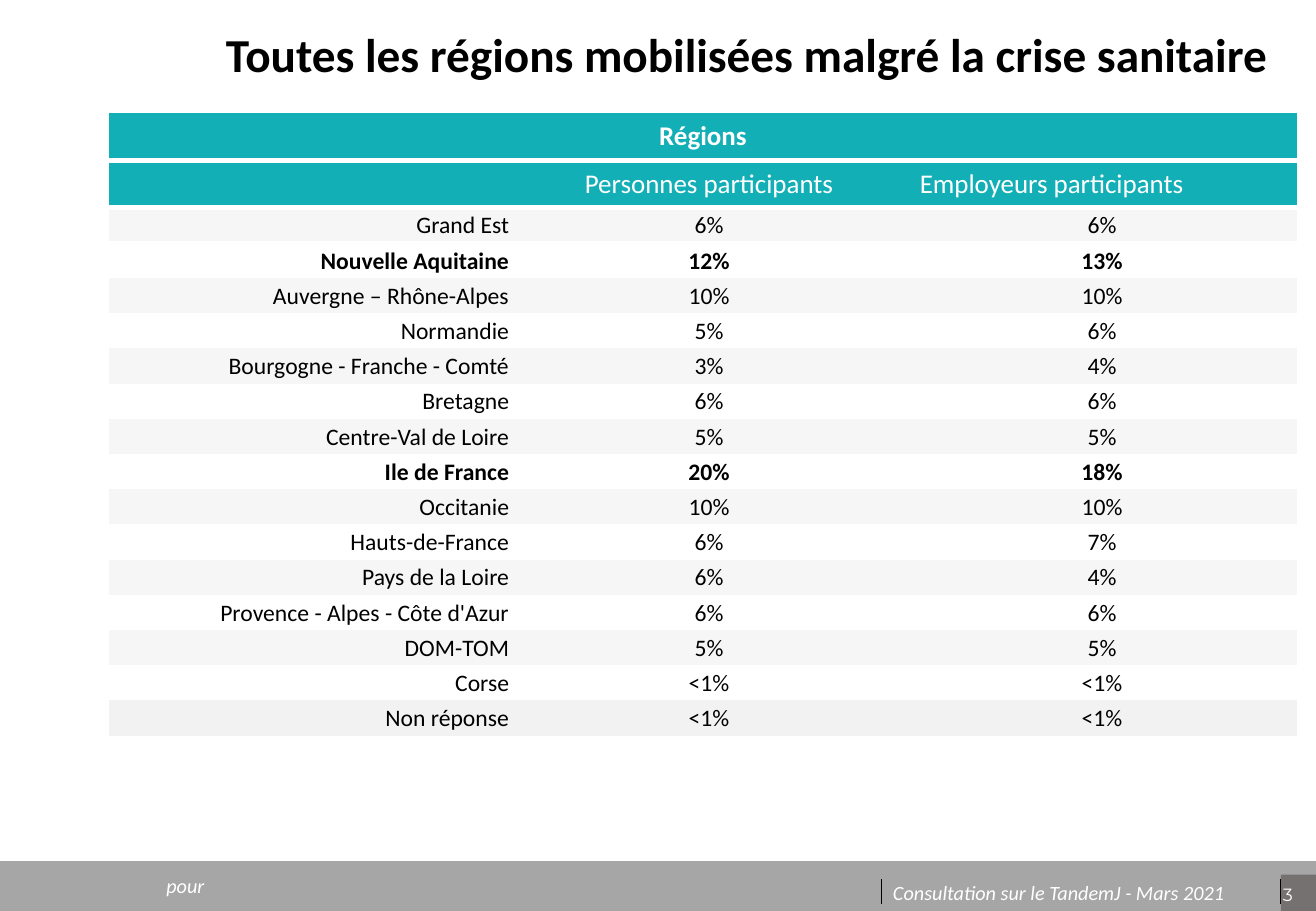
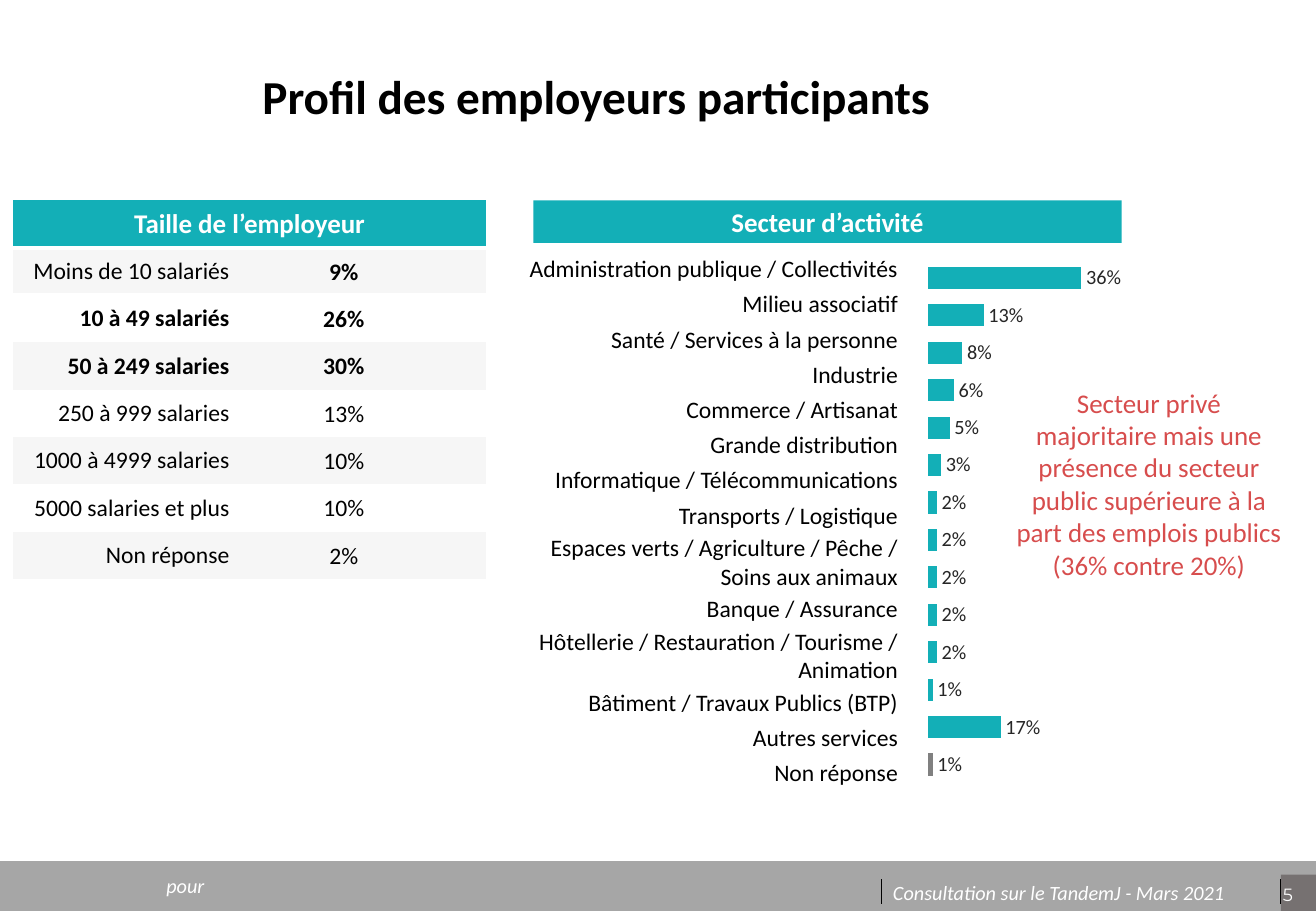
from lxml import etree
from pptx import Presentation
from pptx.chart.data import CategoryChartData
from pptx.dml.color import RGBColor
from pptx.enum.chart import XL_CHART_TYPE, XL_LABEL_POSITION
from pptx.enum.shapes import MSO_CONNECTOR, MSO_SHAPE
from pptx.enum.text import MSO_ANCHOR, MSO_AUTO_SIZE, PP_ALIGN
from pptx.oxml.ns import qn
from pptx.util import Inches, Pt

LEFT, CENTER, RIGHT = PP_ALIGN.LEFT, PP_ALIGN.CENTER, PP_ALIGN.RIGHT
MIDDLE = MSO_ANCHOR.MIDDLE
RECTANGLE = MSO_SHAPE.RECTANGLE
STRAIGHT = MSO_CONNECTOR.STRAIGHT
NO_AUTOFIT = MSO_AUTO_SIZE.NONE
BAR_CLUSTERED = XL_CHART_TYPE.BAR_CLUSTERED
OUTSIDE_END = XL_LABEL_POSITION.OUTSIDE_END

TEAL = RGBColor(0x13, 0xAF, 0xB7)
STRIPE = RGBColor(0xF6, 0xF6, 0xF6)
LAST_STRIPE = RGBColor(0xF2, 0xF2, 0xF2)
BAND_GREY = RGBColor(0xA6, 0xA6, 0xA6)
PAGE_GREY = RGBColor(0x76, 0x71, 0x71)
BAR_GREY = RGBColor(0x80, 0x80, 0x80)
LABEL_GREY = RGBColor(0x26, 0x26, 0x26)
RED = RGBColor(0xD7, 0x4D, 0x4D)
WHITE = RGBColor(0xFF, 0xFF, 0xFF)
BLACK = RGBColor(0, 0, 0)

BODY_FONT, PAGE_FONT = "Calibri", "Montserrat"
NO_GRID_STYLE = "{2D5ABB26-0587-4C30-8999-92F81FD0307C}"
SLIDE_WIDTH, SLIDE_HEIGHT = 10.83, 7.5
HEADER_ROW, DATA_ROW, TWO_LINE_ROW = 0.39, 0.29, 0.48
TIGHT = 0.01


def write(frame, text, size, color, align=LEFT, bold=False, italic=False, name=BODY_FONT):
    frame.text = text
    para = frame.paragraphs[0]
    para.alignment = align
    font = para.font
    font.name, font.size, font.bold, font.italic = name, Pt(size), bold, italic
    font.color.rgb = color


def fill_cell(cell, text, size, color, align, bold, fill=None, tight=True, edges=()):
    write(cell.text_frame, text, size, color, align, bold)
    cell.vertical_anchor = MIDDLE
    if tight or not text:
        cell.margin_left = cell.margin_right = cell.margin_top = Inches(TIGHT)
        cell.margin_bottom = 0
    if fill is None:
        cell.fill.background()
    else:
        cell.fill.solid()
        cell.fill.fore_color.rgb = fill
    # White rules, in the order top then bottom
    properties = cell._tc.get_or_add_tcPr()
    for position, edge in enumerate(edges):
        rule = etree.Element(qn(f"a:{edge}"), w=str(Pt(3)))
        solid = etree.SubElement(rule, qn("a:solidFill"))
        etree.SubElement(solid, qn("a:srgbClr"), val=str(WHITE))
        properties.insert(position, rule)


deck = Presentation()
deck.slide_width, deck.slide_height = Inches(SLIDE_WIDTH), Inches(SLIDE_HEIGHT)
layout = deck.slide_layouts[5]
for holder in list(layout.placeholders):
    if holder.placeholder_format.idx >= 10:
        holder.element.getparent().remove(holder.element)

# Titles and page numbers
PAGES = [
    (3, "Toutes les régions mobilisées malgré la crise sanitaire", 1.76, 0.16),
    (5, "Profil des employeurs participants", 2.06, 0.51),
]
for number, heading, left, top in PAGES:
    slide = deck.slides.add_slide(layout)
    title = slide.shapes.title
    title.left, title.top, title.width, title.height = map(Inches, (left, top, 9.34, 0.62))
    write(title.text_frame, heading, 28, BLACK, bold=True)
    title.text_frame.auto_size = NO_AUTOFIT
    title.text_frame.vertical_anchor = MIDDLE
    title.text_frame.paragraphs[0].line_spacing = 0.9
regions_slide, profile_slide = deck.slides

# Footer, drawn once and moved to the layout
footer = []
for left, top, width, height, color in [
    (0, 7.09, SLIDE_WIDTH, 0.41, BAND_GREY),
    (10.54, 7.2, 0.29, 0.3, PAGE_GREY),
]:
    band = regions_slide.shapes.add_shape(RECTANGLE, *map(Inches, (left, top, width, height)))
    band.shadow.inherit = False
    band.fill.solid()
    band.fill.fore_color.rgb = color
    band.line.fill.background()
    footer.append(band)
for x in (7.25, 10.54):
    divider = regions_slide.shapes.add_connector(STRAIGHT, *map(Inches, (x, 7.24, x, 7.44)))
    divider.line.color.rgb = BLACK
    divider.line.width = Pt(0.5)
    etree.SubElement(divider.element.spPr, qn("a:effectLst"))
    footer.append(divider)
for text, left, top, width in [
    ("pour", 1.27, 7.14, 0.52),
    ("Consultation sur le TandemJ - Mars 2021", 7.25, 7.2, 3.28),
]:
    box = regions_slide.shapes.add_textbox(*map(Inches, (left, top, width, 0.3)))
    write(box.text_frame, text, 12, WHITE, italic=True)
    footer.append(box)
for shape in footer:
    layout.shapes.element.append(shape.element)

for slide, page in zip(deck.slides, PAGES):
    box = slide.shapes.add_textbox(*map(Inches, (10.46, 7.23, 0.37, 0.27)))
    write(box.text_frame, str(page[0]), 10.5, WHITE, name=PAGE_FONT)

# Table contents
REGIONS = [
    ("Grand Est", "6%", "6%"),
    ("Nouvelle Aquitaine", "12%", "13%"),
    ("Auvergne – Rhône-Alpes", "10%", "10%"),
    ("Normandie", "5%", "6%"),
    ("Bourgogne - Franche - Comté", "3%", "4%"),
    ("Bretagne", "6%", "6%"),
    ("Centre-Val de Loire", "5%", "5%"),
    ("Ile de France", "20%", "18%"),
    ("Occitanie", "10%", "10%"),
    ("Hauts-de-France", "6%", "7%"),
    ("Pays de la Loire", "6%", "4%"),
    ("Provence - Alpes - Côte d'Azur", "6%", "6%"),
    ("DOM-TOM", "5%", "5%"),
    ("Corse", "<1%", "<1%"),
    ("Non réponse", "<1%", "<1%"),
]
SIZES = [
    ("Moins de 10 salariés", "9%", ""),
    ("10 à 49 salariés", "26%", ""),
    ("50 à 249 salaries", "30%", ""),
    ("250 à 999 salaries", "13%", ""),
    ("1000 à 4999 salaries", "10%", ""),
    ("5000 salaries et plus", "10%", ""),
    ("Non réponse", "2%", ""),
]
SECTORS = [
    ("Administration publique / Collectivités", 0.36),
    ("Milieu associatif", 0.13),
    ("Santé / Services à la personne", 0.08),
    ("Industrie", 0.06),
    ("Commerce / Artisanat", 0.05),
    ("Grande distribution", 0.03),
    ("Informatique / Télécommunications", 0.02),
    ("Transports / Logistique", 0.02),
    ("Espaces verts / Agriculture / Pêche / Soins aux animaux", 0.02),
    ("Banque / Assurance", 0.02),
    ("Hôtellerie / Restauration / Tourisme / Animation", 0.02),
    ("Bâtiment / Travaux Publics (BTP)", 0.01),
    ("Autres services", 0.17),
    ("Non réponse", 0.01),
]
BOLD_ROWS = {"Nouvelle Aquitaine", "Ile de France", "10 à 49 salariés", "50 à 249 salaries"}
BOLD_VALUES = BOLD_ROWS | {"Moins de 10 salariés"}

# Empty tables: slide, left, top, column widths, row heights
tables = []
for slide, left, top, columns, rows in [
    (regions_slide, 0.9, 0.93, (3.3, 3.27, 3.2), [HEADER_ROW] * 2 + [DATA_ROW] * len(REGIONS)),
    (profile_slide, 0.11, 1.65, (1.88, 1.68, 0.33), [HEADER_ROW] * (1 + len(SIZES))),
    (profile_slide, 4.27, 2.07, (3.13,),
     [TWO_LINE_ROW if len(sector) > 40 else DATA_ROW for sector, share in SECTORS]),
]:
    frame = slide.shapes.add_table(
        len(rows), len(columns), *map(Inches, (left, top, sum(columns), sum(rows))))
    table = frame.table
    table.first_row = table.horz_banding = False
    for style in frame.element.iter(qn("a:tableStyleId")):
        style.text = NO_GRID_STYLE
    for column, width in zip(table.columns, columns):
        column.width = Inches(width)
    for row, height in zip(table.rows, rows):
        row.height = Inches(height)
    tables.append(table)
region_table, size_table, sector_table = tables

# Header rows
for table, heading in [(region_table, "Régions"), (size_table, "Taille de l’employeur")]:
    for column in range(3):
        fill_cell(table.cell(0, column), "" if column else heading, 16, WHITE, CENTER, True,
                  TEAL, tight=False, edges=("lnB",))
    table.cell(0, 0).merge(table.cell(0, 2))
for column, (heading, align) in enumerate([
    ("", CENTER), ("Personnes participants", CENTER), ("Employeurs participants", LEFT),
]):
    fill_cell(region_table.cell(1, column), heading, 16, WHITE, align, False, TEAL,
              tight=False, edges=("lnT", "lnB"))

# Striped data rows
for table, records, first in [(region_table, REGIONS, 2), (size_table, SIZES, 1)]:
    for index, record in enumerate(records):
        fill = None if index % 2 else STRIPE
        if table is region_table and index == len(records) - 1:
            fill = LAST_STRIPE
        for column, text in enumerate(record):
            bold = record[0] in (BOLD_VALUES if column else BOLD_ROWS)
            fill_cell(table.cell(first + index, column), text, 14, BLACK,
                      CENTER if column else RIGHT, bold, fill,
                      tight=column > 0 or table is region_table,
                      edges=() if index else ("lnT",))
for index, (sector, share) in enumerate(SECTORS):
    fill_cell(sector_table.cell(index, 0), sector, 14, BLACK, RIGHT, False)

# Sector chart
data = CategoryChartData(number_format="0%")
data.categories = [str(rank + 1) for rank in range(len(SECTORS))]
data.add_series("Series 1", [share for sector, share in SECTORS])
chart = profile_slide.shapes.add_chart(
    BAR_CLUSTERED, *map(Inches, (7.64, 2, 3.18, 4.45)), data).chart
chart.has_legend = chart.has_title = False
chart.font.name, chart.font.size = BODY_FONT, Pt(18)
chart.font.color.rgb = BLACK
chart.category_axis.reverse_order = True
chart.category_axis.visible = chart.value_axis.visible = False
chart.value_axis.has_major_gridlines = False
chart.value_axis.minimum_scale, chart.value_axis.maximum_scale = 0, 0.9

plot = chart.plots[0]
plot.gap_width, plot.overlap, plot.vary_by_categories = 69, 28, False
plot.has_data_labels = True
labels = plot.data_labels
labels.show_value, labels.position = True, OUTSIDE_END
labels.number_format, labels.number_format_is_linked = "0%", False
labels.font.name, labels.font.size = BODY_FONT, Pt(12)
labels.font.color.rgb = LABEL_GREY
bars = plot.series[0]
for bar_format, color in [(bars.format, TEAL), (bars.points[len(SECTORS) - 1].format, BAR_GREY)]:
    bar_format.fill.solid()
    bar_format.fill.fore_color.rgb = color

# Plot area as shares of the chart
plot_area = chart.element.find(".//" + qn("c:plotArea"))
for old_layout in plot_area.findall(qn("c:layout")):
    plot_area.remove(old_layout)
plot_layout = etree.Element(qn("c:layout"))
plot_area.insert(0, plot_layout)
manual = etree.SubElement(plot_layout, qn("c:manualLayout"))
for tag, value in [("layoutTarget", "inner"), ("xMode", "edge"), ("yMode", "edge"),
                   ("x", "0"), ("y", "0.03"), ("w", "0.99"), ("h", "0.97")]:
    etree.SubElement(manual, qn(f"c:{tag}"), val=value)

# Sector heading
sector_heading = profile_slide.shapes.add_shape(RECTANGLE, *map(Inches, (4.39, 1.65, 4.84, 0.35)))
sector_heading.shadow.inherit = False
sector_heading.fill.solid()
sector_heading.fill.fore_color.rgb = TEAL
sector_heading.line.fill.background()
write(sector_heading.text_frame, "Secteur d’activité", 16, WHITE, CENTER, bold=True)
sector_heading.text_frame.vertical_anchor = MIDDLE

# Comment beside the chart
comment = profile_slide.shapes.add_textbox(*map(Inches, (8.26, 3.13, 2.39, 1.72)))
comment.text_frame.word_wrap = True
write(comment.text_frame,
      "Secteur privé majoritaire mais une présence du secteur public supérieure "
      "à la part des emplois publics (36% contre 20%)", 16, RED, CENTER)

deck.save("out.pptx")
